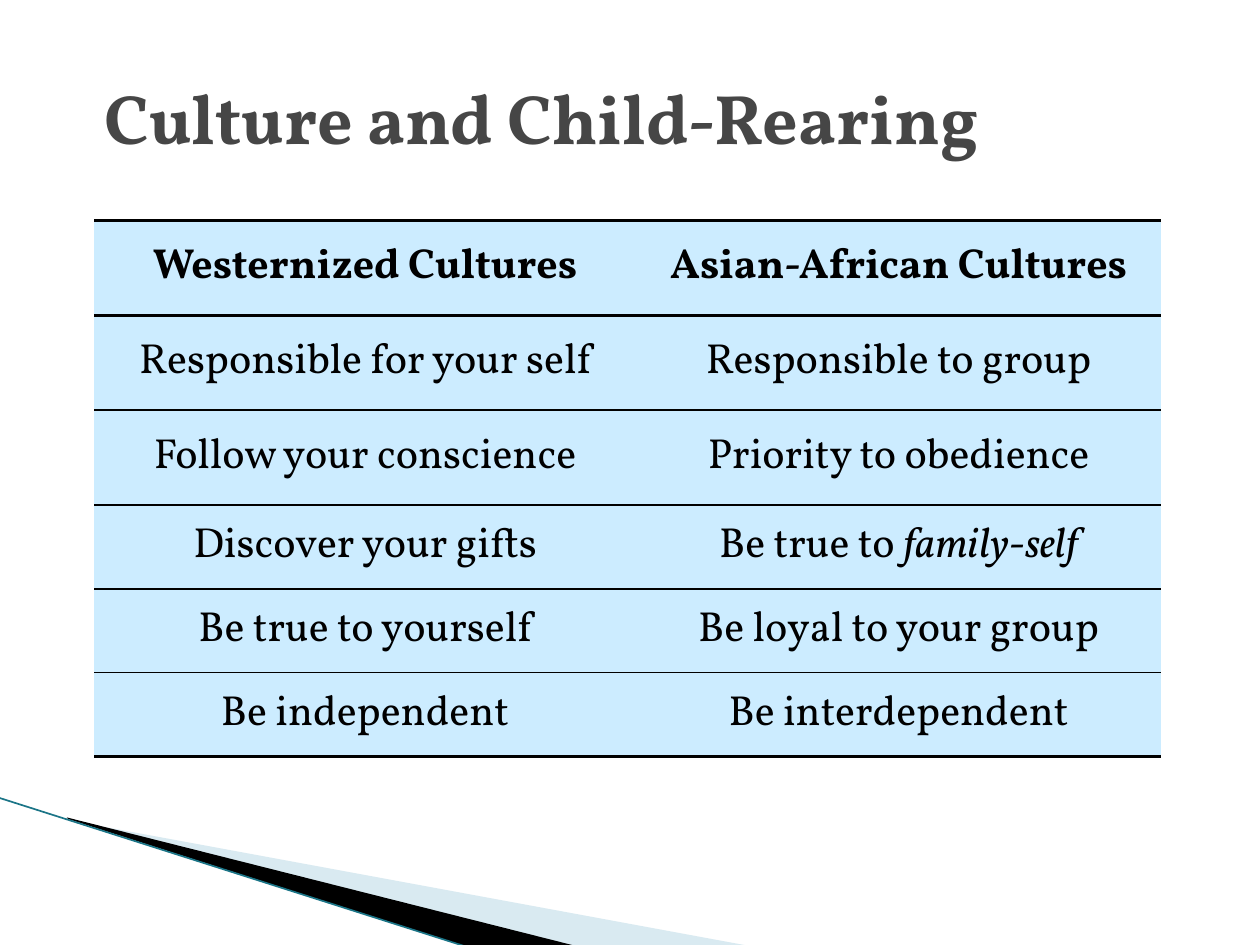
"""Build the slide comparing child-rearing values across cultures."""
import pptx
import pptx.dml.color
import pptx.enum.shapes
import pptx.enum.text
import pptx.oxml
import pptx.oxml.ns
import pptx.util
from lxml import etree

Cm = pptx.util.Cm
Pt = pptx.util.Pt
qn = pptx.oxml.ns.qn
FONT = "Vollkorn"
COLORS = {"title": "464646", "ink": "000000", "cell": "CCECFF", "pale": "A0CBDC", "edge": "1B7587"}


def rgb(name):
    return pptx.dml.color.RGBColor.from_string(COLORS[name])


def add_run(paragraph, text, size, color, bold=False, italic=False):
    run = paragraph.add_run()
    run.text = text
    run.font.name = FONT
    run.font.size = Pt(size)
    run.font.bold = bold
    run.font.italic = italic
    run.font.color.rgb = rgb(color)


deck = pptx.Presentation()
deck.slide_width = Cm(25.4)
deck.slide_height = Cm(19.05)
slide = deck.slides.add_slide(deck.slide_layouts[6])

wedges = [
    ("pale", 40, [(1.4, 16.54), (15.11, 19.07), (11.58, 19.07), (1.4, 16.51)]),
    ("ink", 100, [(1.35, 16.48), (11.61, 19.07), (9.45, 19.1), (1.37, 16.51)]),
]
for color, opacity, corners in wedges:
    points = [(Cm(x), Cm(y)) for x, y in corners]
    outline = slide.shapes.build_freeform(*points[0], scale=1.0)
    outline.add_line_segments(points[1:], close=True)
    wedge = outline.convert_to_shape()
    wedge.shadow.inherit = False
    wedge.line.fill.background()
    wedge.fill.solid()
    wedge.fill.fore_color.rgb = rgb(color)
    if opacity < 100:
        tint = wedge.fill._xPr.find(qn("a:solidFill")).find(qn("a:srgbClr"))
        etree.SubElement(tint, qn("a:alpha"), val=str(opacity * 1000))

wedge_edge = slide.shapes.add_connector(
    pptx.enum.shapes.MSO_CONNECTOR.STRAIGHT, Cm(-0.03), Cm(16.08), Cm(9.45), Cm(19.1))
wedge_edge.line.color.rgb = rgb("edge")
wedge_edge.line.width = Pt(0.95)
etree.SubElement(wedge_edge._element.spPr, qn("a:effectLst"))

comparisons = [
    ("Westernized Cultures", "Asian-African Cultures"),
    ("Responsible for your self", "Responsible to group"),
    ("Follow your conscience", "Priority to obedience"),
    ("Discover your gifts", ("Be true to ", "family-self")),
    ("Be true to yourself", "Be loyal to your group"),
    ("Be independent", "Be interdependent"),
]
row_heights = [1.91] * 3 + [1.69] * 3
column_widths = [10.92, 10.59]
rule_weights = [2.25, 2.25, 1, 1, 1, 1, 2.25]

cultures = slide.shapes.add_table(
    len(comparisons), 2, Cm(1.9), Cm(4.45), Cm(sum(column_widths)), Cm(sum(row_heights))).table
cultures.first_row = False
cultures.horz_banding = False
for column, width in zip(cultures.columns, column_widths):
    column.width = Cm(width)

for r, values in enumerate(comparisons):
    cultures.rows[r].height = Cm(row_heights[r])
    for c, value in enumerate(values):
        cell = cultures.cell(r, c)
        cell.vertical_anchor = pptx.enum.text.MSO_ANCHOR.MIDDLE
        properties = cell._tc.get_or_add_tcPr()
        for side, weight in (("L", 0), ("R", 0), ("T", rule_weights[r]), ("B", rule_weights[r + 1])):
            rule = etree.SubElement(properties, qn("a:ln" + side), w=str(Pt(weight)))
            if weight:
                paint = etree.SubElement(rule, qn("a:solidFill"))
                etree.SubElement(paint, qn("a:srgbClr"), val=COLORS["ink"])
            else:
                etree.SubElement(rule, qn("a:noFill"))
        cell.fill.solid()
        cell.fill.fore_color.rgb = rgb("cell")
        paragraph = cell.text_frame.paragraphs[0]
        paragraph.alignment = pptx.enum.text.PP_ALIGN.CENTER
        parts = (value,) if isinstance(value, str) else value
        for i, part in enumerate(parts):
            add_run(paragraph, part, 24, "ink", bold=r == 0, italic=i == 1)

heading = slide.shapes.add_textbox(Cm(1.85), Cm(0.76), Cm(21.59), Cm(3.18)).text_frame
heading.word_wrap = True
heading.vertical_anchor = pptx.enum.text.MSO_ANCHOR.MIDDLE
add_run(heading.paragraphs[0], "Culture and Child-Rearing", 40, "title", bold=True)

deck.save("out.pptx")
